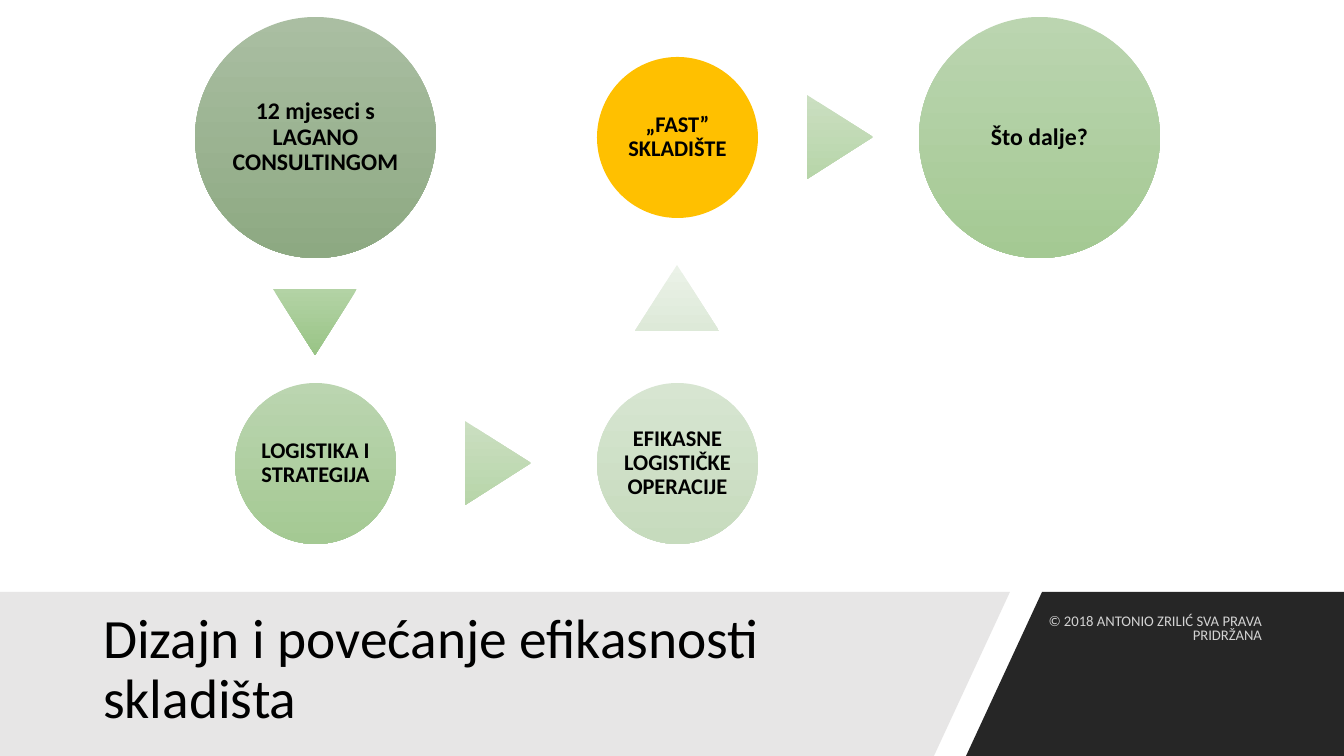
from dataclasses import dataclass

from lxml.etree import SubElement
from pptx import Presentation
from pptx.dml.color import RGBColor
from pptx.enum.shapes import MSO_SHAPE
from pptx.enum.text import MSO_ANCHOR, MSO_AUTO_SIZE, PP_ALIGN
from pptx.oxml.ns import qn
from pptx.util import Emu, Pt

SCALE = 914400 / 100.8
COLS = (315, 677, 1039)
ROWS = (137, 463)
BIG, SMALL = 241, 161


@dataclass(frozen=True)
class Theme:
    """Colours as hex tones, type sizes in points."""
    font: str = "Calibri"
    ink: str = "000000"
    pale: str = "FFFFFF"
    dark: str = "262626"
    band: str = "E7E6E6"
    gold: tuple = ("FFC000",)
    sage: tuple = ("AABEA2", "8DA982")
    leaf: tuple = ("BBD5B0", "A4C993")
    mist: tuple = ("D7E5D1", "C6DBBD")
    down: tuple = ("B3D3A5", "99C486")
    side: tuple = ("CBDFC1", "B7D5A9")
    rise: tuple = ("EBF2E8", "DDE9D8")
    title: float = 39.6
    large: float = 17
    label: float = 16
    note: float = 10.5


THEME = Theme()


def px(num):
    """Turn pixels into EMU."""
    return Emu(round(num * SCALE))


def paint(shape, tones):
    """Fill a shape with one tone or a gradient running down the slide."""
    shape.shadow.inherit = False
    shape.line.fill.background()
    if len(tones) == 1:
        shape.fill.solid()
        shape.fill.fore_color.rgb = RGBColor.from_string(tones[0])
        return
    shape.fill.gradient()
    shape.fill.gradient_angle = 270
    for stop, tone in zip(shape.fill.gradient_stops, tones):
        stop.color.rgb = RGBColor.from_string(tone)
    shape._element.spPr.find(qn("a:gradFill")).set("rotWithShape", "0")


def write(shape, text, size, tone=THEME.ink, align=PP_ALIGN.LEFT,
          bold=False, space=0.9, after=0):
    """Write one paragraph, centred vertically, and return its run."""
    frame = shape.text_frame
    frame.word_wrap = True
    frame.auto_size = MSO_AUTO_SIZE.NONE
    frame.vertical_anchor = MSO_ANCHOR.MIDDLE
    para = frame.paragraphs[0]
    para.alignment = align
    para.line_spacing = space
    para.space_after = Pt(after)
    run = para.add_run()
    run.text = text
    run.font.name = THEME.font
    run.font.size = Pt(size)
    run.font.bold = bold
    run.font.color.rgb = RGBColor.from_string(tone)
    return run


def panel(slide, points, tone):
    """Draw a filled polygon."""
    form = slide.shapes.build_freeform(*points[0], scale=SCALE)
    form.add_line_segments(points[1:], close=True)
    paint(form.convert_to_shape(), (tone,))


def circle(slide, col, row, wide, text, size, tones):
    """Draw a labelled step at a grid place."""
    left, top = COLS[col] - wide // 2, ROWS[row] - wide // 2
    shape = slide.shapes.add_shape(
        MSO_SHAPE.OVAL, px(left), px(top), px(wide), px(wide))
    paint(shape, tones)
    frame = shape.text_frame
    frame.margin_left = frame.margin_right = px(2)
    frame.margin_top = frame.margin_bottom = px(2)
    write(shape, text, size, align=PP_ALIGN.CENTER, bold=True, after=6)


def arrow(slide, mid, row, turn, tones):
    """Draw a triangle around a centre, turned to the next step."""
    wide, high = 84, 66
    shape = slide.shapes.add_shape(
        MSO_SHAPE.ISOSCELES_TRIANGLE, px(mid - wide // 2),
        px(row - high // 2), px(wide), px(high))
    shape.rotation = turn
    paint(shape, tones)


def title(slide, text):
    """Place the title in front of the pale band."""
    head = slide.shapes.title
    head._element.getparent().append(head._element)
    head.left, head.top = px(93), px(610)
    head.width, head.height = px(851), px(121)
    write(head, text, THEME.title)


def notice(slide, text):
    """Place the faded rights line on the dark panel."""
    box = slide.shapes.add_textbox(px(1037), px(609), px(235), px(40))
    run = write(box, text, THEME.note, THEME.pale, PP_ALIGN.RIGHT,
                space=0.8, after=6)
    tone = run.font._element.find(".//" + qn("a:srgbClr"))
    SubElement(tone, qn("a:alpha")).set("val", "80000")


def main():
    """Build the slide and save it."""
    deck = Presentation()
    deck.slide_width, deck.slide_height = px(1344), px(756)
    slide = deck.slides.add_slide(deck.slide_layouts[5])
    panel(slide, [(1042, 592), (1344, 592), (1344, 756), (966, 756)],
          THEME.dark)
    panel(slide, [(0, 592), (1010, 592), (934, 756), (0, 756)], THEME.band)
    title(slide, "Dizajn i povećanje efikasnosti skladišta")
    circle(slide, 0, 0, BIG, "12 mjeseci s LAGANO CONSULTINGOM",
           THEME.large, THEME.sage)
    arrow(slide, COLS[0], 322, 180, THEME.down)
    circle(slide, 0, 1, SMALL, "LOGISTIKA I STRATEGIJA",
           THEME.label, THEME.leaf)
    arrow(slide, 498, ROWS[1], 90, THEME.side)
    circle(slide, 1, 1, SMALL, "EFIKASNE LOGISTIČKE OPERACIJE",
           THEME.label, THEME.mist)
    arrow(slide, COLS[1], 298, 0, THEME.rise)
    circle(slide, 1, 0, SMALL, "„FAST” SKLADIŠTE", THEME.label, THEME.gold)
    arrow(slide, 840, ROWS[0], 90, THEME.side)
    circle(slide, 2, 0, BIG, "Što dalje?", THEME.large, THEME.leaf)
    notice(slide, "© 2018 ANTONIO ZRILIĆ SVA PRAVA PRIDRŽANA")
    deck.save("out.pptx")


if __name__ == "__main__":
    main()
